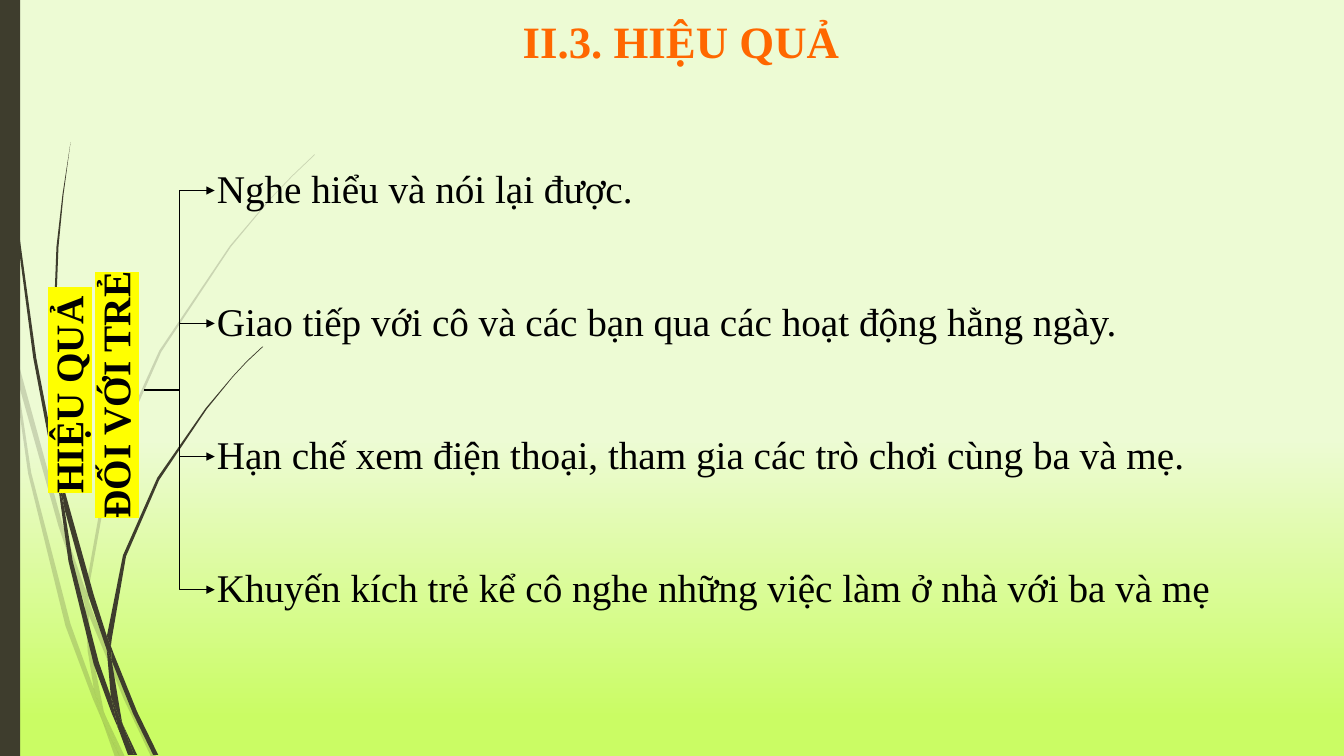
from lxml.etree import SubElement
from pptx import Presentation
from pptx.dml.color import RGBColor
from pptx.enum.shapes import MSO_CONNECTOR as Conn, MSO_SHAPE as Shape
from pptx.enum.text import MSO_ANCHOR as Anchor, PP_ALIGN as Align
from pptx.oxml.ns import qn
from pptx.util import Pt

PX = 9144
WIDTH, HEIGHT = 1333, 750
FONT = "Times New Roman"
BLACK, BARK, ORANGE, YELLOW = "000000", "3E3D2D", "FF6700", "FFFF00"

FAINT_BLADES = [
    [(11, 350), (9, 322), (0, 282), (0, 299), (10, 344)],
    [(58, 522), (84, 599), (85, 586), (62, 520), (14, 345), (17, 376)],
    [(92, 607), (88, 596), (88, 610), (123, 694), (150, 751), (155, 751),
     (127, 692)],
    [(119, 751), (124, 751), (105, 711)],
    [(93, 683), (70, 619), (31, 469), (17, 376), (11, 350), (28, 470),
     (65, 621), (92, 693), (101, 714), (99, 707)],
    [(84, 599), (87, 646), (93, 683), (96, 692), (105, 711), (103, 706),
     (91, 646), (88, 610), (88, 608)],
    [(88, 584), (110, 462), (160, 349), (229, 245), (268, 198), (290, 175),
     (312, 154), (312, 153), (289, 175), (268, 197), (228, 244), (158, 348),
     (107, 461), (85, 584), (85, 586), (88, 596)],
    [(101, 714), (114, 751), (119, 751)],
    [(88, 608), (88, 610), (88, 596), (85, 586), (84, 599)],
    [(96, 692), (93, 683), (99, 707), (101, 714), (119, 751), (105, 711)],
]
DARK_BLADES = [
    [(7, 110), (17, 233), (33, 355), (56, 477), (57, 481), (55, 457),
     (55, 453), (36, 355), (19, 232), (8, 109), (5, 48), (4, 0), (3, 0),
     (4, 48)],
    [(88, 592), (106, 645), (106, 633), (106, 631), (93, 590), (60, 472),
     (64, 505)],
    [(113, 649), (110, 641), (111, 656), (132, 708), (152, 749), (157, 749),
     (136, 706)],
    [(110, 691), (98, 657), (72, 556), (64, 505), (57, 477), (68, 557),
     (93, 659), (111, 708), (117, 722), (116, 717)],
    [(60, 472), (58, 453), (54, 349), (58, 245), (63, 193), (70, 141),
     (62, 193), (56, 245), (52, 349), (55, 449)],
    [(133, 749), (136, 749), (122, 719)],
    [(57, 477), (64, 505), (60, 472), (55, 449), (55, 453)],
    [(111, 633), (125, 552), (158, 476), (205, 406), (231, 374), (245, 359),
     (261, 344), (260, 344), (245, 358), (231, 373), (204, 405), (156, 474),
     (122, 551), (106, 631), (110, 641)],
    [(117, 722), (127, 749), (131, 749)],
    [(106, 645), (110, 691), (116, 706), (122, 719), (121, 716), (111, 656),
     (109, 651)],
    [(106, 645), (109, 651), (111, 656), (110, 641), (106, 631), (106, 633)],
    [(116, 706), (110, 691), (116, 717), (117, 722), (130, 749), (133, 749),
     (122, 719)],
]
EFFECTS = [
    "Nghe hiểu và nói lại được.",
    "Giao tiếp với cô và các bạn qua các hoạt động hằng ngày.",
    "Hạn chế xem điện thoại, tham gia các trò chơi cùng ba và mẹ.",
    "Khuyến kích trẻ kể cô nghe những việc làm ở nhà với ba và mẹ",
]
LABEL = [[("HIỆU QUẢ ", YELLOW)], [("ĐỐI VỚI TRẺ", YELLOW), (" ", None)]]


def rgb(hex_color):
    return RGBColor.from_string(hex_color)


def emu(*lengths):
    return [n * PX for n in lengths]


class Deck:
    def __init__(self):
        self.prs = Presentation()
        self.prs.slide_width, self.prs.slide_height = emu(WIDTH, HEIGHT)
        self.slide = self.prs.slides.add_slide(self.prs.slide_layouts[5])
        self.shapes = self.slide.shapes

    def background(self, stops):
        fill = self.slide.background.fill
        fill.gradient()
        fill.gradient_angle = 270
        for stop, (position, color) in zip(fill.gradient_stops, stops):
            stop.position = position
            stop.color.rgb = rgb(color)

    def paint(self, sp, color, alpha=100):
        sp.shadow.inherit = False
        sp.line.fill.background()
        sp.fill.solid()
        sp.fill.fore_color.rgb = rgb(color)
        if alpha < 100:
            clr = sp.fill._xPr.find(".//" + qn("a:srgbClr"))
            SubElement(clr, qn("a:alpha"), val=str(alpha * 1000))

    def blade(self, points, color, alpha=100):
        builder = self.shapes.build_freeform(*points[0], scale=PX)
        builder.add_line_segments(points[1:], close=True)
        self.paint(builder.convert_to_shape(), color, alpha)

    def bar(self, x, y, w, h, color):
        sp = self.shapes.add_shape(Shape.RECTANGLE, *emu(x, y, w, h))
        self.paint(sp, color)

    def style(self, p, size, color, align, bold=False):
        p.alignment = align
        f = p.font
        f.name, f.size, f.bold = FONT, Pt(size), bold
        f.color.rgb = rgb(color)

    def title(self, x, y, w, h, text):
        sp = self.shapes.title
        sp.left, sp.top, sp.width, sp.height = emu(x, y, w, h)
        tf = sp.text_frame
        tf.text = text
        tf.vertical_anchor = Anchor.MIDDLE
        self.style(tf.paragraphs[0], 32, ORANGE, Align.CENTER, True)

    def box(self, x, y, w, h, rotation=0):
        sp = self.shapes.add_textbox(*emu(x, y, w, h))
        sp.rotation = rotation
        tf = sp.text_frame
        tf.word_wrap = True
        tf.vertical_anchor = Anchor.MIDDLE
        tf.margin_left = tf.margin_right = 2 * PX
        tf.margin_top = tf.margin_bottom = 2 * PX
        return tf

    def line_of_text(self, x, y, w, h, text):
        p = self.box(x, y, w, h).paragraphs[0]
        p.text = text
        p.line_spacing = 0.9
        self.style(p, 28, BLACK, Align.JUSTIFY)

    def vertical_label(self, x, y, w, h, lines):
        tf = self.box(x, y, w, h, 270)
        for i, runs in enumerate(lines):
            p = tf.add_paragraph() if i else tf.paragraphs[0]
            self.style(p, 28, BLACK, Align.CENTER, True)
            for text, highlight in runs:
                r = p.add_run()
                r.text = text
                if highlight:
                    mark = SubElement(r.font._element, qn("a:highlight"))
                    SubElement(mark, qn("a:srgbClr"), val=highlight)

    def arrow(self, x1, y1, x2, y2):
        cxn = self.shapes.add_connector(Conn.ELBOW, *emu(x1, y1, x2, y2))
        cxn.line.width = Pt(1)
        cxn.line.color.rgb = rgb(BLACK)
        ln = cxn.line._get_or_add_ln()
        SubElement(ln, qn("a:tailEnd"), type="triangle")
        SubElement(cxn._element.spPr, qn("a:effectLst"))


def main():
    deck = Deck()
    deck.background([(0.58, "EDFBD4"), (0.95, "CAFC64")])
    for blades, alpha in ((FAINT_BLADES, 20), (DARK_BLADES, 100)):
        for points in blades:
            deck.blade(points, BARK, alpha)
    deck.bar(0, 0, 20, HEIGHT, BARK)
    deck.title(18, 0, 1315, 81, "II.3. HIỆU QUẢ")

    row_x, row_y, row_w, row_h, pitch = 213, 136, 1092, 106, 132
    for i, text in enumerate(EFFECTS):
        y = row_y + i * pitch
        deck.arrow(143, 387, row_x, y + row_h // 2)
        deck.line_of_text(row_x, y, row_w, row_h, text)
    deck.vertical_label(-188, 334, 557, row_h, LABEL)
    deck.prs.save("out.pptx")


if __name__ == "__main__":
    main()
